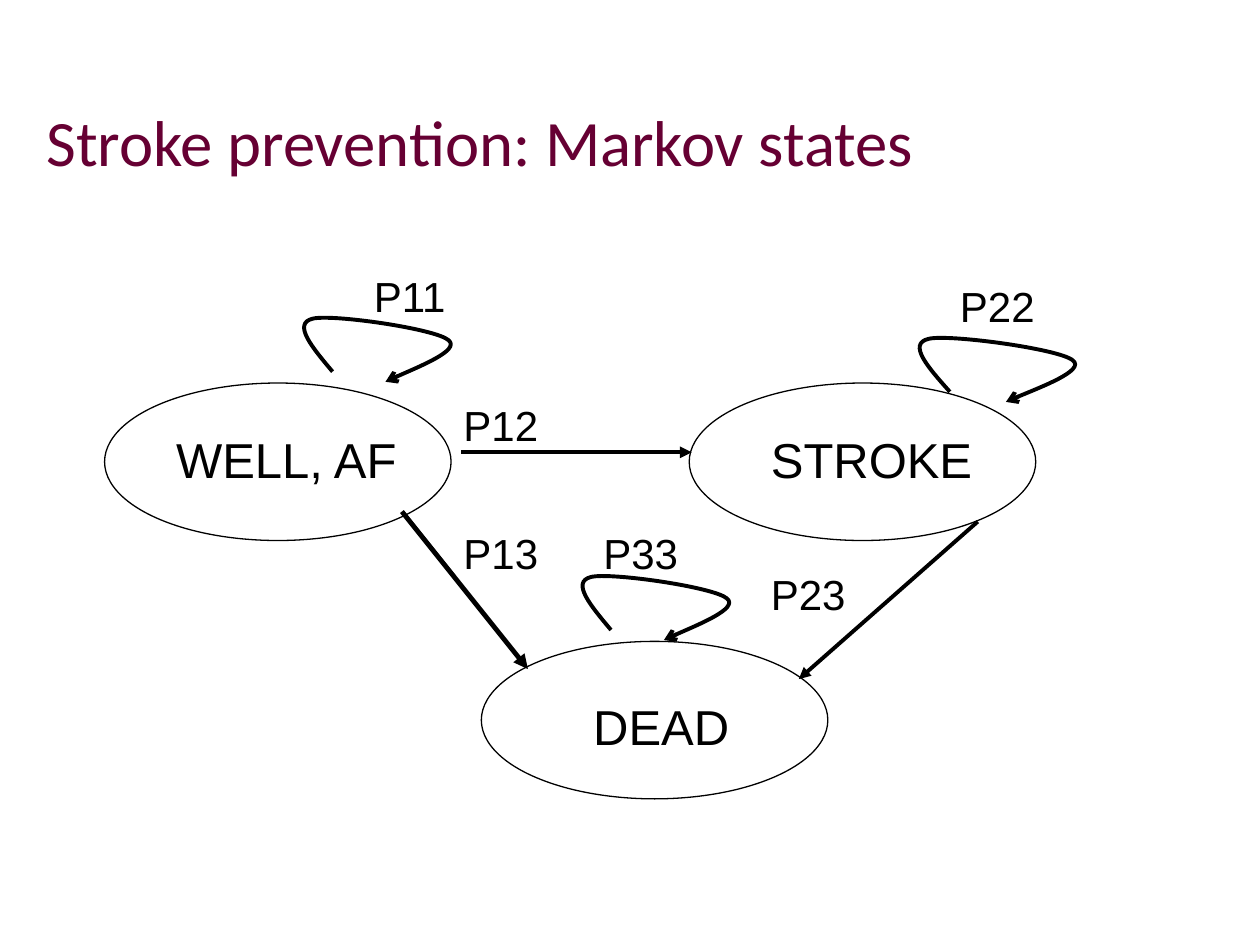
from lxml import etree
from pptx import Presentation
from pptx import util as u
from pptx.dml.color import RGBColor
from pptx.enum import shapes, text
from pptx.oxml.ns import qn

BLACK = "000000"


def style_line(shape, width, arrowhead=None):
    """Black line, with an optional arrowhead at its end and no shadow."""
    shape.line.color.rgb = RGBColor.from_string(BLACK)
    shape.line.width = u.Pt(width)
    if arrowhead:
        etree.SubElement(shape.line._get_or_add_ln(), qn("a:tailEnd"), type=arrowhead)
    properties = shape._element.spPr
    if properties.find(qn("a:effectLst")) is None:
        etree.SubElement(properties, qn("a:effectLst"))


def add_text(words, left, top, width, height, size, font="Arial", color=BLACK):
    box = slide.shapes.add_textbox(*map(u.Inches, (left, top, width, height)))
    box.text_frame.word_wrap = True
    run = box.text_frame.paragraphs[0].add_run()
    run.text = words
    run.font.name = font
    run.font.size = u.Pt(size)
    run.font.color.rgb = RGBColor.from_string(color)
    return box


presentation = Presentation()
presentation.slide_width = u.Inches(10)
presentation.slide_height = u.Inches(7.5)
slide = presentation.slides.add_slide(presentation.slide_layouts[6])

title = add_text("Stroke prevention: Markov states", 0.27, 0.6, 8.63, 0.87, 37, "Calibri", "660033")
title.text_frame.vertical_anchor = text.MSO_ANCHOR.BOTTOM

# States: ellipse left, top; label left, top, width
states = [
    ("STROKE", 5.47, 3.04, 6.02, 3.36, 1.89),
    ("DEAD", 3.82, 5.09, 4.61, 5.48, 1.34),
    ("WELL, AF", 0.83, 3.04, 1.3, 3.36, 2.13),
]
for name, left, top, label_left, label_top, label_width in states:
    ellipse = slide.shapes.add_shape(
        shapes.MSO_SHAPE.OVAL, u.Inches(left), u.Inches(top), u.Inches(2.75), u.Inches(1.25))
    ellipse.shadow.inherit = False
    ellipse.fill.background()
    style_line(ellipse, 0.75)
    add_text(name, label_left, label_top, label_width, 0.57, 28)

# Transitions between states
for x1, y1, x2, y2, width in [
    (3.19, 4.06, 4.19, 5.31, 2.75),
    (3.66, 3.59, 5.49, 3.59, 2.25),
    (7.76, 4.14, 6.34, 5.39, 2.25),
]:
    arrow = slide.shapes.add_connector(
        shapes.MSO_CONNECTOR.STRAIGHT, *map(u.Inches, (x1, y1, x2, y2)))
    style_line(arrow, width, "triangle")

# Transitions back to the same state: a start point, then three Bezier curves
loop_points = [
    (0.32, 0.46), (0.16, 0.27), (0, 0.08), (0.16, 0.04), (0.31, 0),
    (1.14, 0.12), (1.24, 0.21), (1.34, 0.29), (0.84, 0.49), (0.74, 0.54),
]
for left, top, stretch in [(2.32, 2.49, 1), (4.53, 4.54, 1), (7.2, 2.65, 1.06)]:
    points = [(u.Inches(left + x * stretch), u.Inches(top + y)) for x, y in loop_points]
    builder = slide.shapes.build_freeform(*points[0])
    builder.add_line_segments(points[1:], close=False)
    loop = builder.convert_to_shape()
    segments = list(loop._element.iter(qn("a:lnTo")))
    for start in range(0, len(segments), 3):
        curve = etree.Element(qn("a:cubicBezTo"))
        segments[start].addprevious(curve)
        for segment in segments[start:start + 3]:
            curve.append(segment[0])
            segment.getparent().remove(segment)
    loop.shadow.inherit = False
    loop.fill.background()
    style_line(loop, 2.25, "arrow")

# Transition probabilities
for name, left, top, width in [
    ("P12", 3.58, 3.12, 1.42),
    ("P13", 3.58, 4.14, 1.42),
    ("P23", 6.02, 4.46, 1.17),
    ("P11", 2.87, 2.1, 0.83),
    ("P22", 7.52, 2.18, 1.08),
    ("P33", 4.69, 4.14, 1.02),
]:
    add_text(name, left, top, width, 0.5, 24)

presentation.save("out.pptx")
